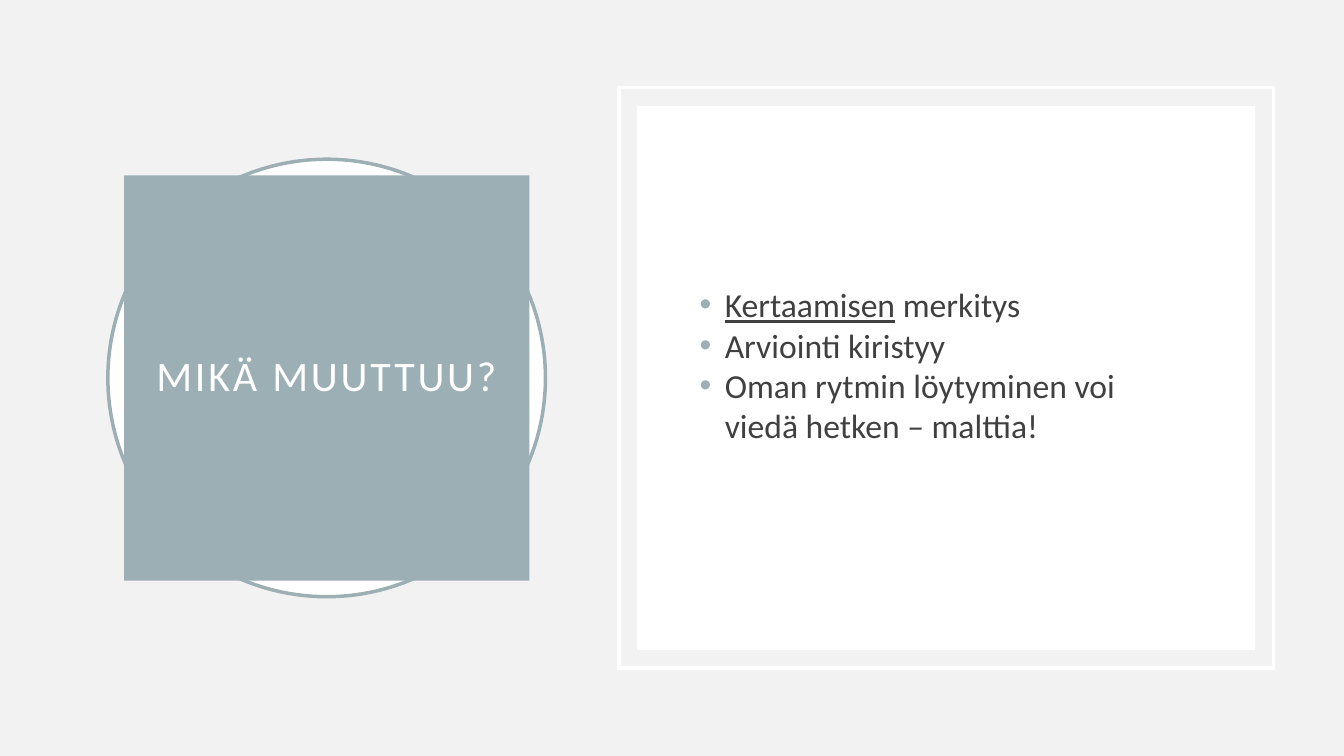
from lxml import etree
from pptx import Presentation
from pptx.dml.color import RGBColor
from pptx.enum.shapes import MSO_SHAPE
from pptx.enum.text import MSO_ANCHOR, PP_ALIGN
from pptx.oxml.ns import qn
from pptx.util import Inches, Pt

RECTANGLE, OVAL = MSO_SHAPE.RECTANGLE, MSO_SHAPE.OVAL
MIDDLE, CENTER, LEFT = MSO_ANCHOR.MIDDLE, PP_ALIGN.CENTER, PP_ALIGN.LEFT
COLORS = {"page": "F2F2F2", "panel": "FFFFFF", "accent": "9BAFB5", "text": "404040"}
FONT = "Calibri"
PAGE_SIZE = (13.33, 7.5)
TITLE_BOX = (1.07, 1.58, 4.34, 4.34)
CONTENT_BOX = (6.14, 0.87, 6.49, 5.76)
TITLE = "MIKÄ MUUTTUU?"
BULLETS = [
    [("Kertaamisen", True), (" merkitys", False)],
    [("Arviointi kiristyy", False)],
    [("Oman rytmin löytyminen voi viedä hetken – malttia!", False)],
]


def color(name):
    """Return the named palette colour."""
    return RGBColor.from_string(COLORS[name])


def inset(box, across, down):
    """Shrink a box by the given margins on each side."""
    left, top, width, height = box
    return left + across, top + down, width - 2 * across, height - 2 * down


def add_panel(page, kind, box, fill=None, line=None):
    """Add a flat shape with an optional fill and outline."""
    panel = page.shapes.add_shape(kind, *map(Inches, box))
    panel.shadow.inherit = False
    if fill:
        panel.fill.solid()
        panel.fill.fore_color.rgb = color(fill)
    else:
        panel.fill.background()
    if line:
        panel.line.color.rgb = color(line)
        panel.line.width = Pt(2.5)
    else:
        panel.line.fill.background()
    return panel


def style_span(span, size, name):
    """Set the font, size and colour of a run."""
    span.font.name = FONT
    span.font.size = Pt(size)
    span.font.color.rgb = color(name)


def add_bullet(para):
    """Give a paragraph a hanging accent bullet."""
    properties = para._p.get_or_add_pPr()
    properties.set("marL", str(Inches(0.25)))
    properties.set("indent", str(-Inches(0.25)))
    bullet_color = etree.SubElement(properties, qn("a:buClr"))
    etree.SubElement(bullet_color, qn("a:srgbClr"), val=COLORS["accent"])
    etree.SubElement(properties, qn("a:buFont"), typeface="Arial")
    etree.SubElement(properties, qn("a:buChar"), char="•")


def add_title(page, box):
    """Place the title square over its circle."""
    add_panel(page, OVAL, box, "panel", "accent")
    square = add_panel(page, RECTANGLE, inset(box, 0.16, 0.16), "accent")
    frame = square.text_frame
    frame.word_wrap = True
    frame.vertical_anchor = MIDDLE
    frame.margin_left = frame.margin_right = Inches(0.2)
    frame.margin_top = frame.margin_bottom = Inches(0.2)
    frame.text = TITLE
    para = frame.paragraphs[0]
    para.alignment = CENTER
    para.line_spacing = 0.9
    span = para.runs[0]
    style_span(span, 30, "panel")
    span.font._element.set("spc", "200")


def add_content(page, box):
    """Place the framed panel with its bullet list."""
    add_panel(page, RECTANGLE, box, line="panel")
    add_panel(page, RECTANGLE, inset(box, 0.18, 0.18), "panel")
    body = page.shapes.add_textbox(*map(Inches, inset(box, 0.7, 0.71)))
    frame = body.text_frame
    frame.word_wrap = True
    frame.vertical_anchor = MIDDLE
    frame.margin_bottom = Inches(0.31)
    for index, parts in enumerate(BULLETS):
        para = frame.add_paragraph() if index else frame.paragraphs[0]
        para.alignment = LEFT
        add_bullet(para)
        for text, underlined in parts:
            span = para.add_run()
            span.text = text
            style_span(span, 24, "text")
            span.font.underline = underlined


def main():
    """Build and save the deck."""
    deck = Presentation()
    deck.slide_width, deck.slide_height = map(Inches, PAGE_SIZE)
    page = deck.slides.add_slide(deck.slide_layouts[6])
    page.background.fill.solid()
    page.background.fill.fore_color.rgb = color("page")
    add_title(page, TITLE_BOX)
    add_content(page, CONTENT_BOX)
    deck.save("out.pptx")


if __name__ == "__main__":
    main()
